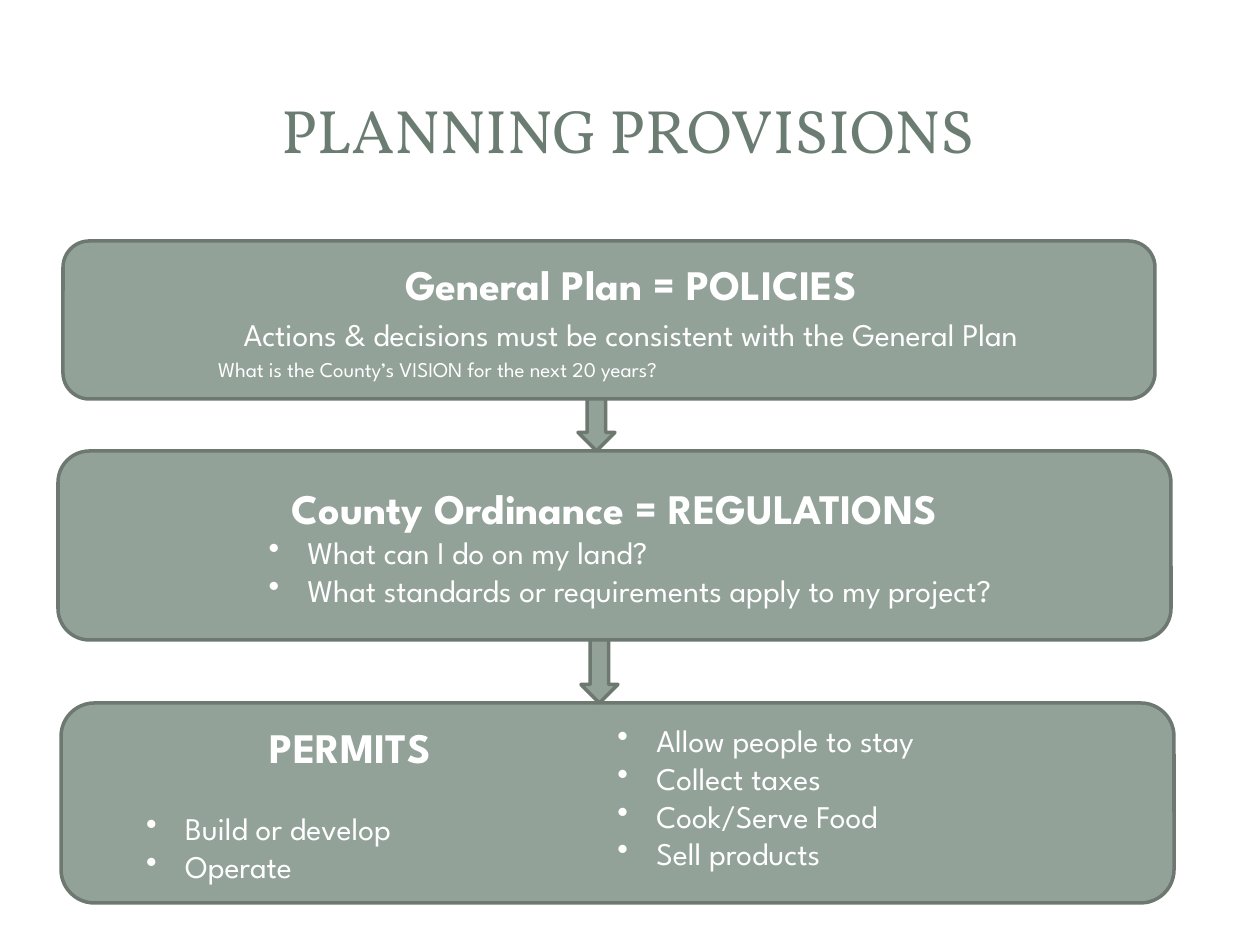
"""Build the Planning Provisions slide: three boxes linked by down arrows."""
from lxml.etree import SubElement
from pptx import Presentation
from pptx.dml.color import RGBColor
from pptx.enum.shapes import MSO_SHAPE
from pptx.enum.text import MSO_ANCHOR, PP_ALIGN
from pptx.oxml.ns import qn
from pptx.util import Pt

EMU_PER_PX = 914400 / 126
COLORS = {"title": "6B7D72", "fill": "93A299", "line": "6D7871", "text": "FFFFFF"}
FONTS = {"title": "Vollkorn", "body": "League Spartan"}


def px(length):
    return round(length * EMU_PER_PX)


def color(name):
    return RGBColor.from_string(COLORS[name])


class SlideBuilder:
    def __init__(self, slide):
        self.slide = slide

    def style_font(self, para, size, face="body", tint="text", bold=False):
        para.font.name = FONTS[face]
        para.font.size = Pt(size)
        para.font.bold = bold
        para.font.color.rgb = color(tint)

    def title(self, text, left, top, width, height):
        box = self.slide.shapes.title
        box.left, box.top, box.width, box.height = map(px, (left, top, width, height))
        frame = box.text_frame
        frame.text = text
        frame.vertical_anchor = MSO_ANCHOR.MIDDLE
        para = frame.paragraphs[0]
        para.alignment = PP_ALIGN.CENTER
        self.style_font(para, 35, "title", "title")

    def shape(self, kind, left, top, width, height):
        shape = self.slide.shapes.add_shape(kind, *map(px, (left, top, width, height)))
        shape.shadow.inherit = False
        shape.fill.solid()
        shape.fill.fore_color.rgb = color("fill")
        shape.line.color.rgb = color("line")
        shape.line.width = Pt(2)
        return shape

    def arrow(self, left, top, height):
        self.shape(MSO_SHAPE.DOWN_ARROW, left, top, 37, height)

    def box(self, left, top, width, height, columns=1):
        box = self.shape(MSO_SHAPE.ROUNDED_RECTANGLE, left, top, width, height)
        frame = box.text_frame
        frame.word_wrap = True
        frame.vertical_anchor = MSO_ANCHOR.MIDDLE
        if columns > 1:
            box.element.txBody.bodyPr.set("numCol", str(columns))
        return frame

    def paragraph(self, frame, text, size=18, align=PP_ALIGN.LEFT, indent=0,
                  bullet=False, before=0, bold=False):
        para = frame.paragraphs[0]
        if para.runs:
            para = frame.add_paragraph()
        para.add_run().text = text
        para.alignment = align
        properties = para._p.get_or_add_pPr()
        properties.set("marL", str(px(indent)))
        properties.set("indent", str(px(-39 if bullet else 0)))
        if bullet:
            SubElement(properties, qn("a:buChar")).set("char", "•")
        else:
            SubElement(properties, qn("a:buNone"))
        para.space_before = Pt(before)
        self.style_font(para, size, bold=bold)

    def heading(self, frame, text, indent=0, before=0):
        self.paragraph(frame, text, 24, PP_ALIGN.CENTER, indent, before=before, bold=True)

    def bullets(self, frame, items, indent, before=0):
        for index, item in enumerate(items):
            self.paragraph(frame, item, indent=indent, bullet=True,
                           before=0 if index else before)


def main():
    deck = Presentation()
    deck.slide_width, deck.slide_height = px(1260), px(945)
    page = SlideBuilder(deck.slides.add_slide(deck.slide_layouts[5]))
    page.title("PLANNING PROVISIONS", 59, 57, 1138, 144)

    policies = page.box(63, 241, 1092, 158)
    page.heading(policies, "General Plan = POLICIES", indent=44, before=4.8)
    page.paragraph(policies, "Actions & decisions must be consistent with the General Plan",
                   align=PP_ALIGN.CENTER, indent=44, before=3.6)
    page.paragraph(policies, "What is the County’s VISION for the next 20 years?",
                   size=12, indent=135, before=2.4)

    regulations = page.box(58, 451, 1113, 189)
    page.heading(regulations, "County Ordinance = REGULATIONS")
    page.bullets(regulations, ["What can I do on my land?",
                               "What standards or requirements apply to my project?"], 228)
    page.arrow(578, 399, 52)

    permits = page.box(61, 703, 1113, 200, columns=2)
    page.heading(permits, "PERMITS")
    page.bullets(permits, ["Build or develop", "Operate"], 102, before=21.6)
    page.bullets(permits, ["Allow people to stay", "Collect taxes",
                           "Cook/Serve Food", "Sell products"], 39)
    page.arrow(581, 640, 63)

    deck.save("out.pptx")


if __name__ == "__main__":
    main()
